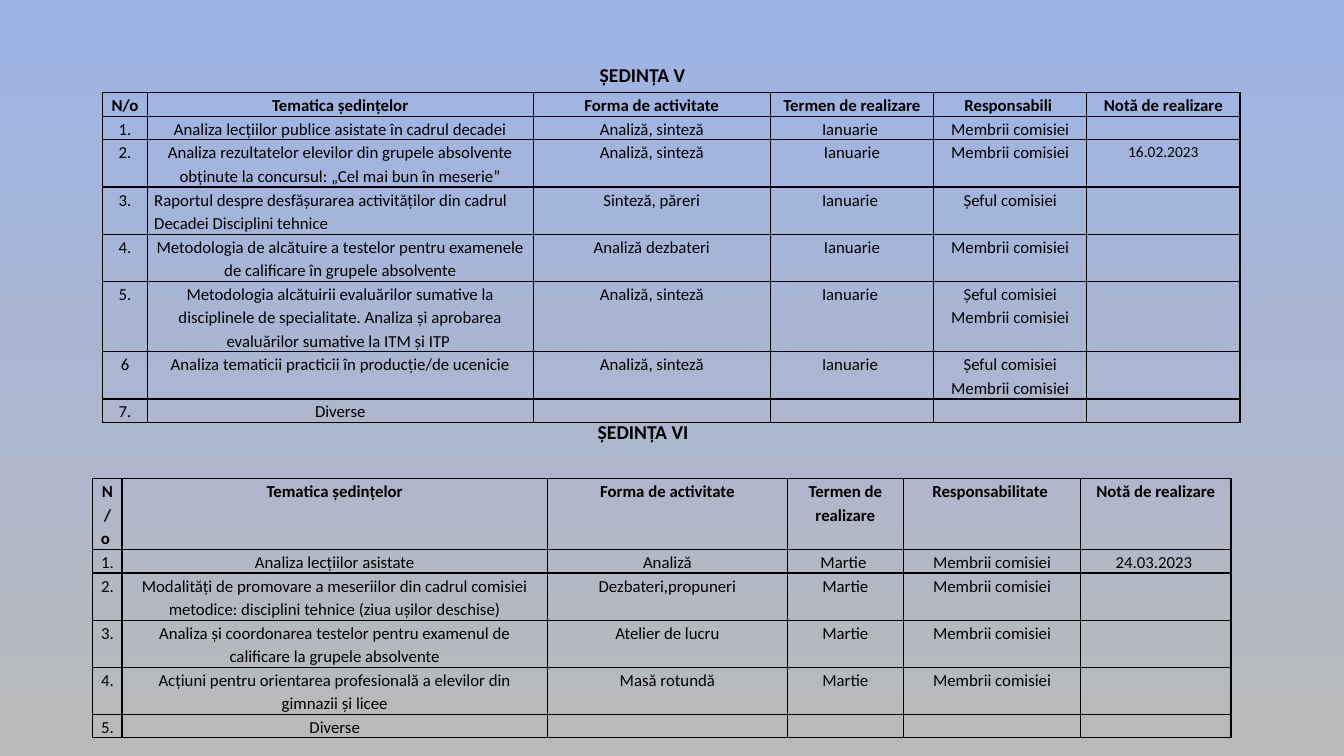
from dataclasses import dataclass, field

from lxml.etree import SubElement
from pptx import Presentation
from pptx.dml.color import RGBColor
from pptx.enum.text import MSO_ANCHOR, PP_ALIGN
from pptx.oxml import parse_xml
from pptx.oxml.ns import nsdecls, qn
from pptx.slide import Slide
from pptx.table import _Cell as Cell
from pptx.util import Inches, Pt

COLORS = {"ink": "000000", "sky": "9CB4E7", "stone": "B9B9B9"}
LINE_HEIGHT = 0.23
TEXT_SIZE = 12


@dataclass
class Heading:
    text: str
    left: float
    top: float


@dataclass
class Meeting:
    heading: Heading
    left: float
    top: float
    widths: list[float]
    row_lines: list[int]
    rows: list[list[str]]
    sizes: dict[tuple[int, int], int] = field(default_factory=dict)
    left_aligned: set[tuple[int, int]] = field(default_factory=set)


MEETINGS = [
    Meeting(
        Heading("ȘEDINȚA V", 5.85, 0.58), 1.02, 0.92,
        [0.44, 3.83, 2.35, 1.62, 1.52, 1.52],
        [1, 1, 2, 2, 2, 3, 2, 1],
        [
            ["N/o", "Tematica ședințelor", "Forma de activitate",
             "Termen de realizare", "Responsabili ", "Notă de realizare"],
            ["1.", "Analiza lecțiilor publice asistate în cadrul decadei",
             "Analiză, sinteză", "Ianuarie ", "Membrii comisiei", ""],
            ["2.", "Analiza rezultatelor elevilor din grupele absolvente "
             "obținute la concursul: „Cel mai bun în meserie”",
             "Analiză, sinteză", "Ianuarie", "Membrii comisiei", "16.02.2023"],
            ["3.", "Raportul despre desfășurarea activităților din cadrul "
             "Decadei Disciplini tehnice",
             "Sinteză, păreri", "Ianuarie ", "Șeful comisiei", ""],
            ["4.", "Metodologia de alcătuire a testelor pentru examenele "
             "de calificare în grupele absolvente",
             "Analiză dezbateri", "Ianuarie", "Membrii comisiei", ""],
            ["5.", "Metodologia alcătuirii evaluărilor sumative la "
             "disciplinele de specialitate. Analiza și aprobarea "
             "evaluărilor sumative la ITM și ITP ",
             "Analiză, sinteză", "Ianuarie ",
             "Șeful comisiei\nMembrii comisiei", ""],
            ["6", "Analiza tematicii practicii în producție/de ucenicie",
             "Analiză, sinteză", "Ianuarie ",
             "Șeful comisiei\nMembrii comisiei", ""],
            ["7.", "Diverse", "", "", "", ""],
        ],
        sizes={(2, 5): 11},
        left_aligned={(3, 1)},
    ),
    Meeting(
        Heading("ȘEDINȚA VI", 5.83, 4.12), 0.92, 4.75,
        [0.29, 4.22, 2.38, 1.15, 1.76, 1.49],
        [3, 1, 2, 2, 2, 1],
        [
            ["N/o ", "Tematica ședințelor", "Forma de activitate",
             "Termen de realizare", "Responsabilitate ", "Notă de realizare"],
            ["1.", "Analiza lecțiilor asistate", "Analiză", "Martie ",
             "Membrii comisiei", "24.03.2023 "],
            ["2.", "Modalități de promovare a meseriilor din cadrul comisiei "
             "metodice: disciplini tehnice (ziua ușilor deschise)",
             "Dezbateri,propuneri", "Martie", "Membrii comisiei", ""],
            ["3.", "Analiza și coordonarea testelor pentru examenul de "
             "calificare la grupele absolvente",
             "Atelier de lucru", "Martie", "Membrii comisiei", ""],
            ["4.", "Acțiuni pentru orientarea profesională a elevilor din "
             "gimnazii și licee",
             "Masă rotundă", "Martie", "Membrii comisiei", ""],
            ["5.", "Diverse", "", "", "", ""],
        ],
    ),
]


def set_format(target: object, values: dict[str, object]) -> None:
    for name, value in values.items():
        setattr(target, name, value)


def style_font(font: object, size: int, bold: bool) -> None:
    set_format(font, {"name": "Calibri", "size": Pt(size), "bold": bold})
    font.color.rgb = RGBColor.from_string(COLORS["ink"])


def add_borders(cell: Cell) -> None:
    properties = cell._tc.get_or_add_tcPr()
    for index, side in enumerate(("lnL", "lnR", "lnT", "lnB")):
        line = parse_xml(
            f'<a:{side} {nsdecls("a")} w="{Pt(1)}"><a:solidFill>'
            f'<a:srgbClr val="{COLORS["ink"]}"/></a:solidFill></a:{side}>'
        )
        properties.insert(index, line)


def fill_cell(cell: Cell, text: str, size: int, bold: bool, align: PP_ALIGN) -> None:
    set_format(cell, {
        "margin_left": Inches(0.07), "margin_right": Inches(0.07),
        "margin_top": 0, "margin_bottom": 0, "text": text,
    })
    cell.fill.background()
    add_borders(cell)
    for para in cell.text_frame.paragraphs:
        set_format(para, {"alignment": align, "line_spacing": 1.15})
        for span in para.runs:
            style_font(span.font, size, bold)
        if not para.runs:
            # Keeps an empty cell as low as its row
            SubElement(para._p, qn("a:endParaRPr"), sz=str(size * 100))


def add_meeting_table(page: Slide, meeting: Meeting) -> None:
    frame = page.shapes.add_table(
        len(meeting.rows), len(meeting.widths),
        Inches(meeting.left), Inches(meeting.top),
        Inches(sum(meeting.widths)), Inches(LINE_HEIGHT * sum(meeting.row_lines)),
    )
    table = frame.table
    set_format(table, {"first_row": False, "horz_banding": False})
    for column, width in zip(table.columns, meeting.widths):
        column.width = Inches(width)
    for row, lines in zip(table.rows, meeting.row_lines):
        row.height = Inches(LINE_HEIGHT * lines)
    for r, texts in enumerate(meeting.rows):
        for c, text in enumerate(texts):
            align = PP_ALIGN.LEFT if (r, c) in meeting.left_aligned else PP_ALIGN.CENTER
            size = meeting.sizes.get((r, c), TEXT_SIZE)
            fill_cell(table.cell(r, c), text, size, r == 0, align)


def add_heading(page: Slide, heading: Heading) -> None:
    box = page.shapes.add_textbox(
        Inches(heading.left), Inches(heading.top), Inches(2.3), Inches(0.64)
    )
    set_format(box.text_frame, {"word_wrap": True, "vertical_anchor": MSO_ANCHOR.TOP})
    span = box.text_frame.paragraphs[0].add_run()
    span.text = heading.text
    style_font(span.font, 14, True)


def main() -> None:
    deck = Presentation()
    set_format(deck, {"slide_width": Inches(13.33), "slide_height": Inches(7.5)})
    page = deck.slides.add_slide(deck.slide_layouts[6])

    # Background running from top to bottom
    fill = page.background.fill
    fill.gradient()
    fill.gradient_angle = 270
    for stop, name in zip(fill.gradient_stops, ("sky", "stone")):
        stop.color.rgb = RGBColor.from_string(COLORS[name])

    # Tables, then their headings
    for meeting in MEETINGS:
        add_meeting_table(page, meeting)
    for meeting in MEETINGS:
        add_heading(page, meeting.heading)

    deck.save("out.pptx")


if __name__ == "__main__":
    main()
